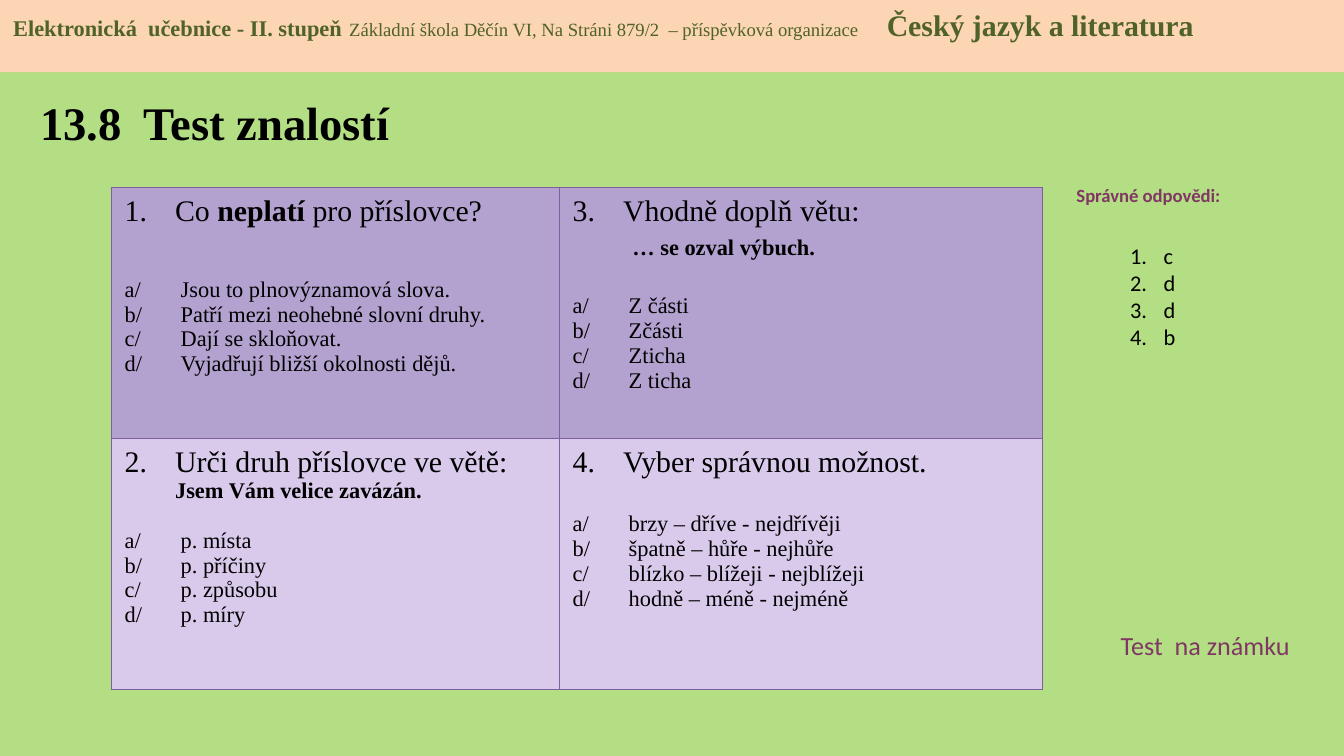
"""Build a grammar quiz slide with a four-question table and an answer key."""
from dataclasses import dataclass, field

from lxml import etree
from pptx import Presentation, util as u
from pptx.dml.color import RGBColor
from pptx.enum import shapes, text
from pptx.oxml.ns import qn

SERIF, SANS = "Times New Roman", "Calibri"
BLACK, GREEN, PLUM = "000000", "4F6228", "813763"
BACKGROUND, HEADER_FILL, BORDER = "B3DE84", "FCD5B5", "7D60A0"
ROW_FILLS = ("B3A2CF", "D9CAEC")


@dataclass
class Run:
    text: str
    size: float = 12
    bold: bool = False
    color: str = BLACK
    font: str = SERIF


@dataclass
class Line:
    runs: list[Run]
    before: float = 0
    indent: float = 0
    hanging: bool = False
    number: int = 0
    align: text.PP_ALIGN = text.PP_ALIGN.LEFT
    tabs: list[float] = field(default_factory=list)


@dataclass
class Question:
    number: int
    title: list[Run]
    answers: list[str]
    gap: float
    example: str = ""
    example_indent: float = 27
    example_before: float = 0


@dataclass
class Label:
    left: float
    top: float
    width: float
    height: float
    lines: list[Line]
    anchor: text.MSO_ANCHOR = text.MSO_ANCHOR.TOP
    margin_top: float = 3.6
    margin_right: float = 7.2


def paint(color_fill, color: str) -> None:
    color_fill.solid()
    color_fill.fore_color.rgb = RGBColor.from_string(color)


def write(frame, lines: list[Line]) -> None:
    for index, line in enumerate(lines):
        paragraph = frame.add_paragraph() if index else frame.paragraphs[0]
        paragraph.alignment = line.align
        paragraph.space_before = u.Pt(line.before)
        properties = paragraph._p.get_or_add_pPr()
        properties.set("marL", str(u.Pt(line.indent)))
        properties.set("indent", str(u.Pt(-line.indent if line.hanging else 0)))
        if line.number:
            etree.SubElement(properties, qn("a:buAutoNum"), type="arabicPeriod", startAt=str(line.number))
        if line.tabs:
            tab_list = etree.SubElement(properties, qn("a:tabLst"))
            for position in line.tabs:
                etree.SubElement(tab_list, qn("a:tab"), pos=str(u.Pt(position)), algn="l")
        for item in line.runs:
            run = paragraph.add_run()
            run.text = item.text
            run.font.name, run.font.size, run.font.bold = item.font, u.Pt(item.size), item.bold
            paint(run.font.fill, item.color)


def add_label(slide, label: Label) -> None:
    shape = slide.shapes.add_textbox(*map(u.Pt, (label.left, label.top, label.width, label.height)))
    frame = shape.text_frame
    frame.word_wrap = True
    frame.vertical_anchor = label.anchor
    frame.margin_top, frame.margin_right = u.Pt(label.margin_top), u.Pt(label.margin_right)
    write(frame, label.lines)


def add_header(slide, line: Line) -> None:
    shape = slide.shapes.add_shape(shapes.MSO_SHAPE.RECTANGLE, 0, 0, u.Pt(720), u.Pt(38.7))
    shape.shadow.inherit = False
    paint(shape.fill, HEADER_FILL)
    shape.line.fill.background()
    shape.text_frame.word_wrap = True
    shape.text_frame.vertical_anchor = text.MSO_ANCHOR.TOP
    write(shape.text_frame, [line])


def question_lines(question: Question) -> list[Line]:
    lines = [Line(question.title, indent=27, hanging=True, number=question.number)]
    if question.example:
        lines.append(Line([Run(question.example, bold=True)], question.example_before, question.example_indent))
    for index, (letter, answer) in enumerate(zip("abcd", question.answers)):
        lines.append(Line([Run(f"{letter}/\t{answer}")], 0 if index else question.gap, 30, True))
    return lines


def add_border(cell) -> None:
    properties = cell._tc.get_or_add_tcPr()
    for side in ("lnL", "lnR", "lnT", "lnB"):
        line = etree.SubElement(properties, qn(f"a:{side}"), w=str(u.Pt(0.75)))
        fill = etree.SubElement(line, qn("a:solidFill"))
        etree.SubElement(fill, qn("a:srgbClr"), val=BORDER)


def add_question_table(slide, rows: list[list[Question]]) -> None:
    widths, height = (240, 259), 134.4
    frame = slide.shapes.add_table(2, 2, u.Pt(59.6), u.Pt(100.6), u.Pt(sum(widths)), u.Pt(2 * height))
    table = frame.table
    table.first_row = table.horz_banding = False
    for column, width in zip(table.columns, widths):
        column.width = u.Pt(width)
    for row, questions, color in zip(table.rows, rows, ROW_FILLS):
        row.height = u.Pt(height)
        for cell, question in zip(row.cells, questions):
            add_border(cell)
            paint(cell.fill, color)
            write(cell.text_frame, question_lines(question))


QUESTIONS = [
    [
        Question(1, [Run("Co ", 16), Run("neplatí", 16, True), Run(" pro příslovce?", 16)],
                 ["Jsou to plnovýznamová slova.", "Patří mezi neohebné slovní druhy.",
                  "Dají se skloňovat.", "Vyjadřují bližší okolnosti dějů."], 26.6),
        Question(3, [Run("Vhodně doplň větu:", 16)], ["Z části", "Zčásti", "Zticha", "Z ticha"],
                 17.7, "… se ozval výbuch.", 32, 4.4),
    ],
    [
        Question(2, [Run("Urči druh příslovce ve větě:", 16)],
                 ["p. místa", "p. příčiny", "p. způsobu", "p. míry"], 13.3, "Jsem Vám velice zavázán."),
        Question(4, [Run("Vyber správnou možnost.", 16)],
                 ["brzy – dříve - nejdřívěji", "špatně – hůře - nejhůře",
                  "blízko – blížeji - nejblížeji", "hodně – méně - nejméně"], 17.7),
    ],
]
HEADER = Line([
    Run("Elektronická  učebnice - II. stupeň\t", 12, True, GREEN),
    Run("Základní škola Děčín VI, Na Stráni 879/2  – příspěvková organizace\t", 10, False, GREEN),
    Run("Český jazyk a literatura", 16, True, GREEN),
], tabs=[227.4, 537.2])
TITLE = Label(14.4, 41.8, 241, 46.8, [Line([Run("13.8  Test znalostí", 25, True)])], text.MSO_ANCHOR.MIDDLE)
KEY_TITLE = Label(558.7, 95, 113, 19.4,
                  [Line([Run("Správné odpovědi:", 10, True, PLUM, SANS)], align=text.PP_ALIGN.CENTER)])
KEY = Label(598.3, 111.6, 39.6, 94.3,
            [Line([Run(letter, font=SANS)], indent=18, hanging=True, number=1) for letter in "cddb"],
            margin_top=18.2, margin_right=0)
GRADE = Label(593.3, 333.4, 113, 24.5, [Line([Run("Test  na známku", 14, False, PLUM, SANS)])])


def main() -> None:
    presentation = Presentation()
    presentation.slide_width, presentation.slide_height = u.Pt(720), u.Pt(405)
    slide = presentation.slides.add_slide(presentation.slide_layouts[6])
    paint(slide.background.fill, BACKGROUND)
    add_label(slide, TITLE)
    add_label(slide, KEY_TITLE)
    add_question_table(slide, QUESTIONS)
    add_label(slide, KEY)
    add_label(slide, GRADE)
    add_header(slide, HEADER)
    presentation.save("out.pptx")


if __name__ == "__main__":
    main()
